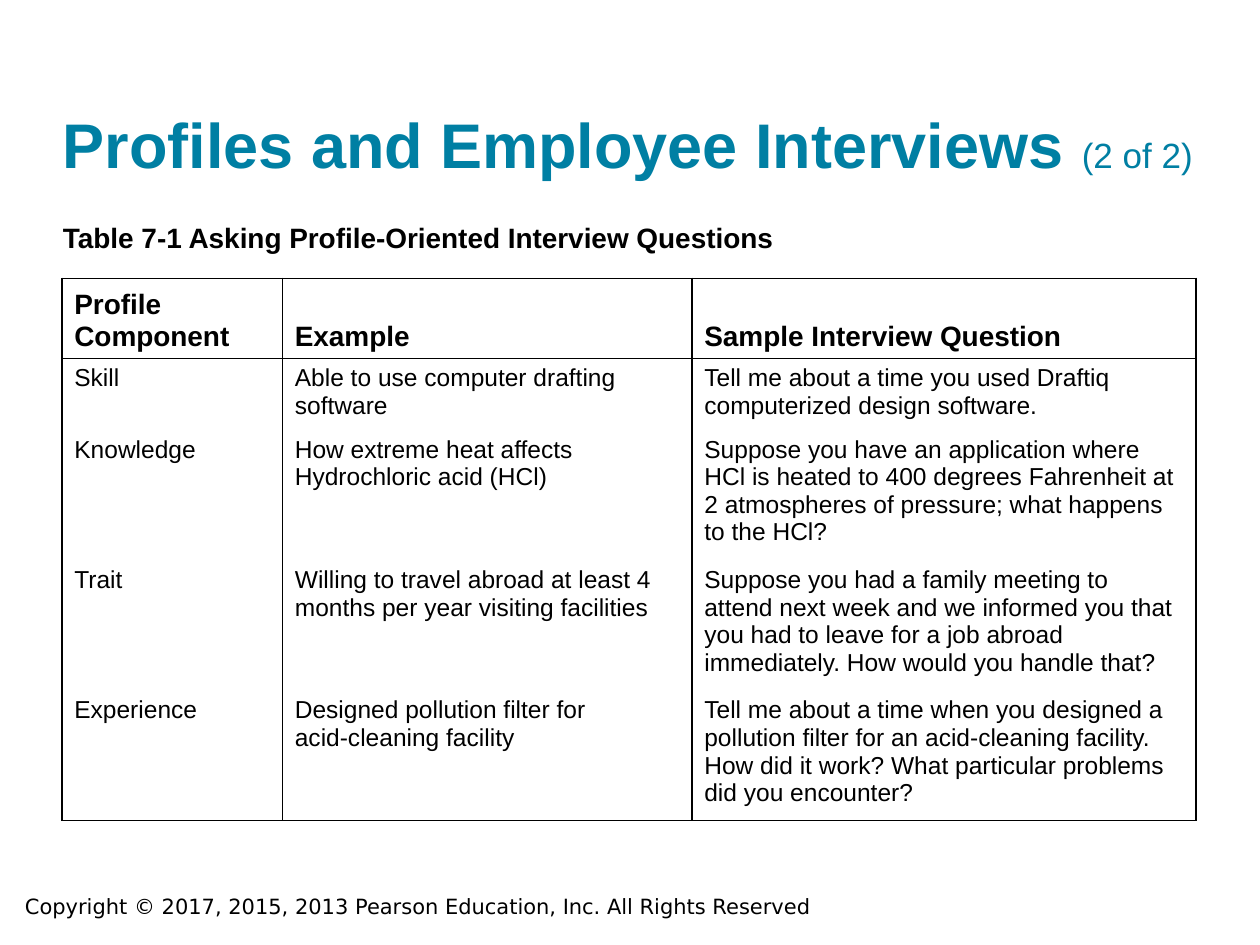
"""Build the interview question table slide."""
from lxml import etree
from pptx import Presentation
from pptx import util as u
from pptx.dml.color import RGBColor
from pptx.enum import text
from pptx.oxml import ns

BLACK = RGBColor(0x00, 0x00, 0x00)
WHITE = RGBColor(0xFF, 0xFF, 0xFF)
TEAL = RGBColor(0x00, 0x7F, 0xA3)

TITLE = {"name": "Arial", "size": u.Pt(36), "bold": True}
COUNT = {"name": "Arial", "size": u.Pt(20), "bold": False}
HEAD = {"name": "Arial", "size": u.Pt(16), "bold": True}
BODY = {"name": "Arial", "size": u.Pt(14), "bold": False}
FOOTER = {"name": "DejaVu Sans", "size": u.Pt(12), "bold": False}
FLUSH = dict.fromkeys(("margin_left", "margin_top", "margin_right", "margin_bottom"), 0)
NO_STYLE = "{2D5ABB26-0587-4C30-8999-92F81FD0307C}"

COLUMNS = (1.75, 3.25, 4)
HEIGHTS = (0.58, 0.52, 0.95, 0.95, 0.95)
QUESTIONS = (
    ("Profile\nComponent", "Example", "Sample Interview Question"),
    ("Skill", "Able to use computer drafting\nsoftware",
     "Tell me about a time you used Draftiq computerized design software."),
    ("Knowledge", "How extreme heat affects\nHydrochloric acid (HCl)",
     "Suppose you have an application where HCl is heated to 400 degrees Fahrenheit at "
     "2 atmospheres of pressure; what happens to the HCl?"),
    ("Trait", "Willing to travel abroad at least 4\nmonths per year visiting facilities",
     "Suppose you had a family meeting to attend next week and we informed you that "
     "you had to leave for a job abroad immediately. How would you handle that?"),
    ("Experience", "Designed pollution filter for\nacid-cleaning facility",
     "Tell me about a time when you designed a pollution filter for an acid-cleaning facility. "
     "How did it work? What particular problems\ndid you encounter?"),
)


class Deck:
    def __init__(self):
        self.prs = Presentation()
        self.prs.slide_width, self.prs.slide_height = u.Inches(10), u.Inches(7.5)
        self.color = BLACK
        self.s = self.prs.slides.add_slide(self.prs.slide_layouts[6])

    def apply(self, obj, fmt):
        for key, value in fmt.items():
            setattr(obj, key, value)

    def run(self, p, words, fmt, color=None):
        r = p.add_run()
        r.text = words
        self.apply(r.font, fmt)
        r.font.color.rgb = color or self.color

    def label(self, box, runs, color=None, **frame):
        sp = self.s.shapes.add_textbox(*map(u.Inches, box))
        tf = sp.text_frame
        self.apply(tf, {"word_wrap": True, **frame})
        for words, fmt in runs:
            self.run(tf.paragraphs[0], words, fmt, color)

    def border(self, cell, sides):
        tcPr = cell._tc.get_or_add_tcPr()
        for side in "LRTB":
            ln = etree.SubElement(tcPr, ns.qn(f"a:ln{side}"), w=str(u.Pt(1)))
            if side in sides:
                fill = etree.SubElement(ln, ns.qn("a:solidFill"))
                etree.SubElement(fill, ns.qn("a:srgbClr"), val=str(self.color))
            else:
                etree.SubElement(ln, ns.qn("a:noFill"))

    def cell(self, cell, words, fmt, sides, anchor):
        self.border(cell, sides)
        cell.fill.solid()
        cell.fill.fore_color.rgb = WHITE
        cell.vertical_anchor = anchor
        tf = cell.text_frame
        for i, line in enumerate(words.split("\n")):
            p = tf.add_paragraph() if i else tf.paragraphs[0]
            self.run(p, line, fmt)

    def table(self, left, top, widths, heights, rows):
        size = map(u.Inches, (left, top, sum(widths), sum(heights)))
        table = self.s.shapes.add_table(len(rows), len(widths), *size).table
        table.horz_banding = False
        table._tbl.tblPr.find(ns.qn("a:tableStyleId")).text = NO_STYLE
        for col, width in zip(table.columns, widths):
            col.width = u.Inches(width)
        for i, (height, row) in enumerate(zip(heights, rows)):
            table.rows[i].height = u.Inches(height)
            sides = "LR" + "T" * (i < 2) + "B" * (i in (0, len(rows) - 1))
            anchor = text.MSO_ANCHOR.TOP if i else text.MSO_ANCHOR.BOTTOM
            for j, words in enumerate(row):
                self.cell(table.cell(i, j), words, BODY if i else HEAD, sides, anchor)


def main():
    deck = Deck()
    deck.label((0.1, 7.04, 7.83, 0.3),
               [("Copyright © 2017, 2015, 2013 Pearson Education, Inc. All Rights Reserved", FOOTER)])
    deck.label((0.5, 0.24, 9, 1.2),
               [("Profiles and Employee Interviews ", TITLE), ("(2 of 2)", COUNT)],
               TEAL, vertical_anchor=text.MSO_ANCHOR.BOTTOM, **FLUSH)
    deck.label((0.5, 1.75, 9, 0.33),
               [("Table 7-1 Asking Profile-Oriented Interview Questions", HEAD)], **FLUSH)
    deck.table(0.49, 2.21, COLUMNS, HEIGHTS, QUESTIONS)
    deck.prs.save("out.pptx")


if __name__ == "__main__":
    main()
